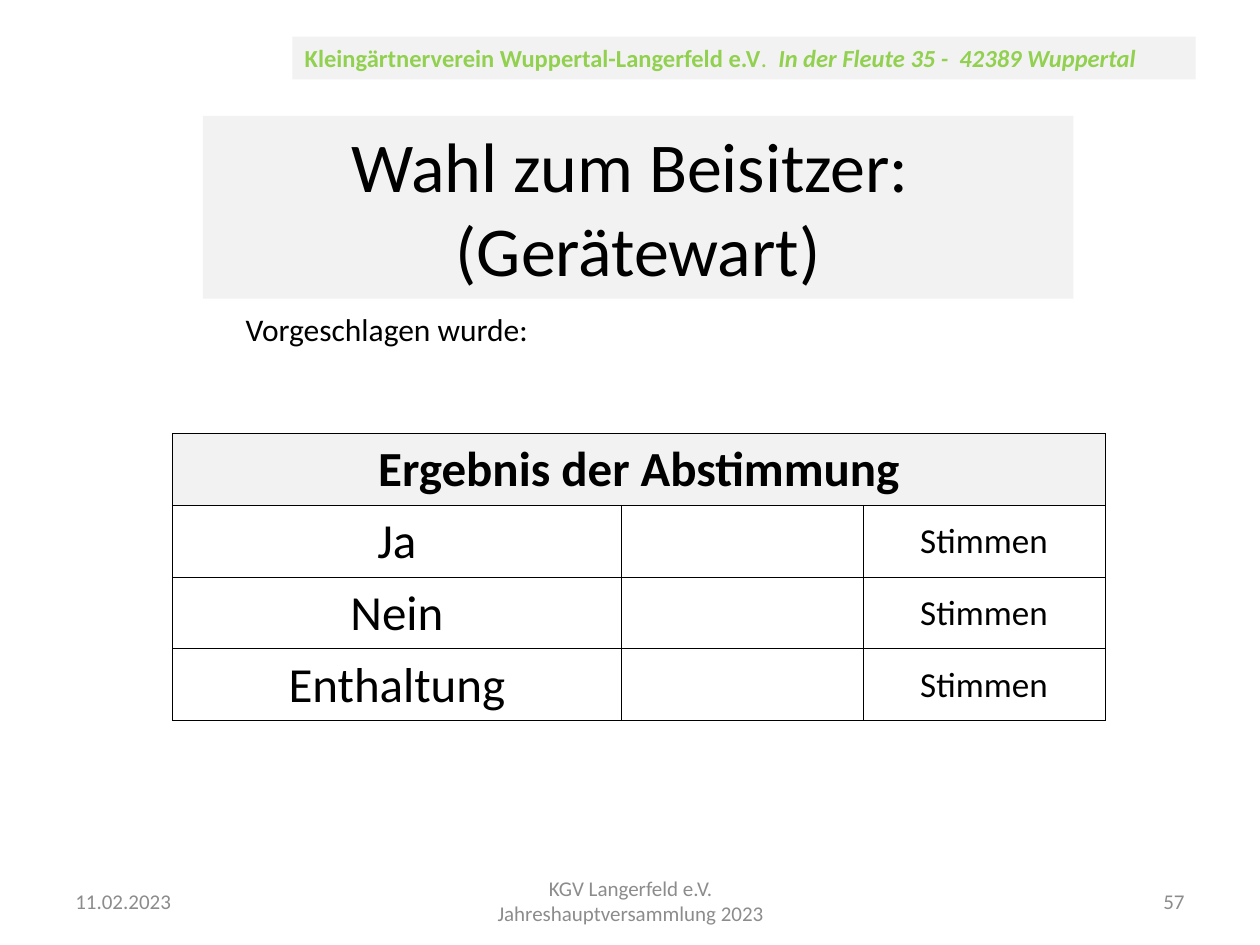
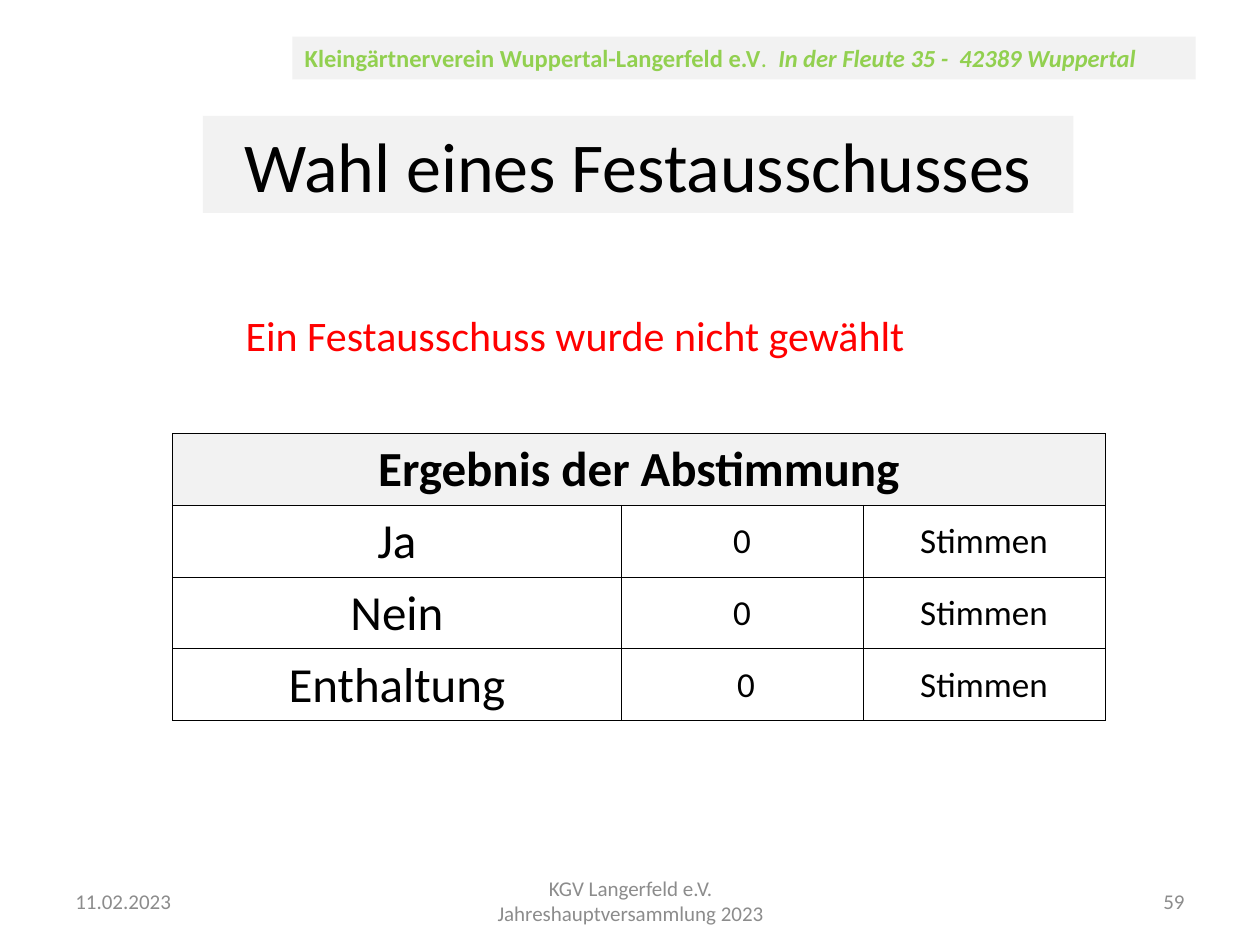
from dataclasses import dataclass

from lxml import etree
from pptx import Presentation
from pptx.dml.color import RGBColor
from pptx.enum.shapes import MSO_SHAPE
from pptx.enum.text import MSO_ANCHOR, PP_ALIGN
from pptx.oxml.ns import qn
from pptx.util import Inches, Pt

LEFT, CENTER, RIGHT = PP_ALIGN.LEFT, PP_ALIGN.CENTER, PP_ALIGN.RIGHT
TOP, MIDDLE = MSO_ANCHOR.TOP, MSO_ANCHOR.MIDDLE
RECT = MSO_SHAPE.RECTANGLE
TITLE_ONLY = 5
COLUMNS, ROWS = 100, 75  # square grid cells of a tenth of an inch
CELL = Inches(0.1)


@dataclass(frozen=True)
class Theme:
    font: str = "Calibri"
    band: str = "F2F2F2"
    text: str = "000000"
    club: str = "92D050"
    footer: str = "8C8C8C"
    alert: str = "FF0000"
    title_size: int = 40
    table_size: int = 28
    note_size: int = 24
    votes_size: int = 20
    body_size: int = 18
    club_size: int = 14
    footer_size: int = 12
    border: float = 0.5


T = Theme()


def grid(*cells):
    return [round(c * CELL) for c in cells]


def fill(obj, color):
    obj.fill.solid()
    obj.fill.fore_color.rgb = RGBColor.from_string(color)


def add_run(p, text, size=T.body_size, color=T.text, bold=False, italic=False):
    r = p.add_run()
    r.text = text
    f = r.font
    f.name, f.size, f.bold, f.italic = T.font, Pt(size), bold, italic
    f.color.rgb = RGBColor.from_string(color)


def write(tf, text, align=LEFT, anchor=TOP, **fmt):
    """Fill a text frame with one paragraph per line of text."""
    tf.word_wrap = True
    tf.vertical_anchor = anchor
    for i, line in enumerate(text.split("\n")):
        p = tf.add_paragraph() if i else tf.paragraphs[0]
        p.alignment = align
        add_run(p, line, **fmt)


def add_text(s, box, text, **fmt):
    write(s.shapes.add_textbox(*grid(*box)).text_frame, text, **fmt)


def add_club_band(s):
    sp = s.shapes.add_shape(RECT, *grid(23.2, 2.9, 71.7, 3.4))
    sp.shadow.inherit = False
    fill(sp, T.band)
    sp.line.fill.background()
    tf = sp.text_frame
    write(tf, "Kleingärtnerverein Wuppertal-Langerfeld e.V",
          size=T.club_size, color=T.club, bold=True)
    p = tf.paragraphs[0]
    add_run(p, ".  ", size=T.club_size, color=T.club)
    add_run(p, "In der Fleute 35 -  42389 Wuppertal",
            size=T.club_size, color=T.club, bold=True, italic=True)


def add_footer(s, number):
    parts = [
        (5, 23.3, "11.02.2023", LEFT),
        (34.2, 31.7, "KGV Langerfeld e.V. Jahreshauptversammlung 2023", CENTER),
        (71.7, 23.3, str(number), RIGHT),
    ]
    for left, width, text, align in parts:
        add_text(s, (left, 69.5, width, 4), text, align=align, anchor=MIDDLE,
                 size=T.footer_size, color=T.footer)


def set_title(s, text):
    sp = s.shapes.title
    height = 7.7 + 6.8 * text.count("\n")
    sp.left, sp.top, sp.width, sp.height = grid(16.1, 9.2, 69.1, height)
    fill(sp, T.band)
    write(sp.text_frame, text, align=CENTER, size=T.title_size)


def add_borders(cell):
    tc_pr = cell._tc.get_or_add_tcPr()
    for side in ("lnL", "lnR", "lnT", "lnB"):
        ln = etree.SubElement(tc_pr, qn("a:" + side), w=str(Pt(T.border)))
        solid = etree.SubElement(ln, qn("a:solidFill"))
        etree.SubElement(solid, qn("a:srgbClr"), val=T.text)


def add_result_table(s, votes):
    rows = [("Ergebnis der Abstimmung", "", "")]
    rows += [(choice, count, "Stimmen")
             for choice, count in zip(("Ja", "Nein", "Enthaltung"), votes)]
    widths = (35.6, 19.2, 19.2)
    row_height = 5.7
    frame = s.shapes.add_table(len(rows), len(widths), *grid(
        13.7, 34.4, sum(widths), row_height * len(rows)))
    table = frame.table
    table.first_row = table.horz_banding = False
    for column, width in zip(table.columns, grid(*widths)):
        column.width = width
    for i, row in enumerate(rows):
        table.rows[i].height = grid(row_height)[0]
        for j, text in enumerate(row):
            cell = table.cell(i, j)
            add_borders(cell)
            if i == 0:
                fill(cell, T.band)
            else:
                cell.fill.background()
            cell.margin_left = cell.margin_right = cell.margin_top = Inches(0.01)
            cell.margin_bottom = 0
            cell.vertical_anchor = MIDDLE
            if text:
                write(cell.text_frame, text, align=CENTER, anchor=MIDDLE, bold=i == 0,
                      size=T.votes_size if j else T.table_size)
    table.cell(0, 0).merge(table.cell(0, len(widths) - 1))


def add_election(prs, number, title, note, votes, **note_format):
    s = prs.slides.add_slide(prs.slide_layouts[TITLE_ONLY])
    add_club_band(s)
    add_footer(s, number)
    set_title(s, title)
    add_text(s, (18.5, 24.1, 55.9, 7.1), note, **note_format)
    add_result_table(s, votes)


def main():
    prs = Presentation()
    prs.slide_width, prs.slide_height = COLUMNS * CELL, ROWS * CELL
    add_election(prs, 57, "Wahl zum Beisitzer: \n(Gerätewart)",
                 "Vorgeschlagen wurde:", ("", "", ""))
    add_election(prs, 59, "Wahl eines Festausschusses",
                 "Ein Festausschuss wurde nicht gewählt", ("0", "0", " 0"),
                 size=T.note_size, color=T.alert)
    prs.save("out.pptx")


if __name__ == "__main__":
    main()
